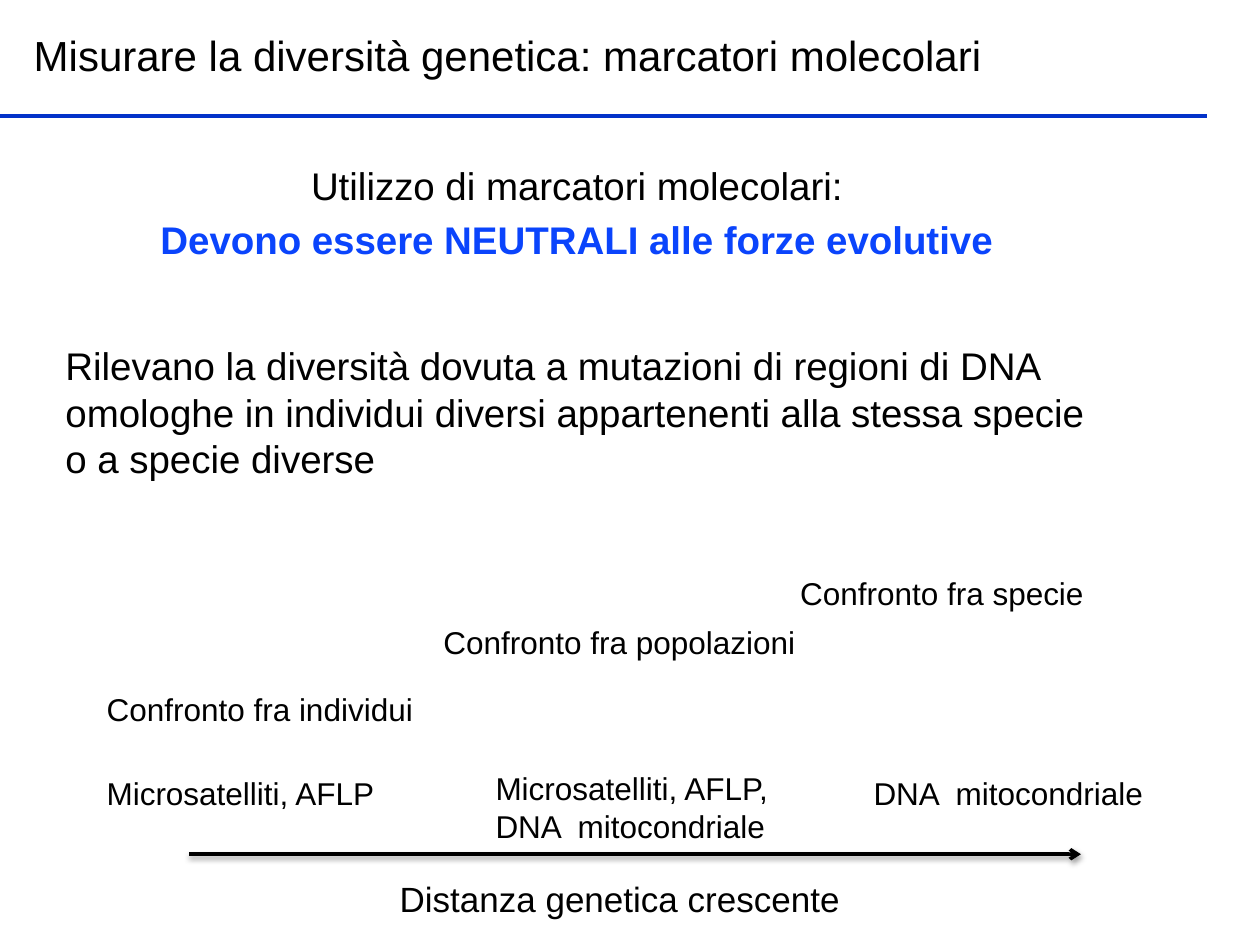
import pptx
import pptx.util
import pptx.dml.color
import pptx.enum.shapes
import pptx.enum.text
from lxml import etree

Cm, Pt = pptx.util.Cm, pptx.util.Pt
ALIGN = pptx.enum.text.PP_ALIGN
ANCHOR = pptx.enum.text.MSO_ANCHOR

COLORS = {"text": "000000", "rule": "0332C9", "emphasis": "0A44FC", "arrow": "000000"}
FONT = "Arial"

# Content; positions and sizes are in centimetres
TITLE = "Misurare la diversità genetica: marcatori molecolari"
INTRO = ["Utilizzo di marcatori molecolari:", "Devono essere NEUTRALI alle forze evolutive"]
EXPLANATION = [
    "Rilevano la diversità dovuta a mutazioni di regioni di DNA omologhe "
    "in individui diversi appartenenti alla stessa specie o a specie diverse"
]
AXIS_LABEL = "Distanza genetica crescente"
COMPARISONS = [  # left, top, width, lines
    (1.9, 13.78, 7.2, ["Confronto fra individui"]),
    (8.69, 12.44, 7.62, ["Confronto fra popolazioni"]),
    (15.88, 11.44, 7.62, ["Confronto fra specie"]),
]
MARKERS = [
    (1.9, 15.48, 6.14, ["Microsatelliti, AFLP"]),
    (9.74, 15.38, 6.14, ["Microsatelliti, AFLP,", "DNA  mitocondriale"]),
    (17.36, 15.48, 6.14, ["DNA  mitocondriale"]),
]
LABEL_LINE, LABEL_MARGINS = 0.77, 0.25

presentation = pptx.Presentation()
presentation.slide_width, presentation.slide_height = Cm(25.4), Cm(19.05)
slide = presentation.slides.add_slide(presentation.slide_layouts[6])


def rgb(name):
    return pptx.dml.color.RGBColor.from_string(COLORS[name])


def add_text(left, top, width, height, lines, size,
             align=ALIGN.LEFT, anchor=ANCHOR.TOP, space_before=0):
    shape = slide.shapes.add_textbox(Cm(left), Cm(top), Cm(width), Cm(height))
    frame = shape.text_frame
    frame.word_wrap = True
    frame.vertical_anchor = anchor
    frame.text = "\n".join(lines)
    for paragraph in frame.paragraphs:
        paragraph.alignment = align
        paragraph.space_before = Pt(space_before)
        paragraph.font.name = FONT
        paragraph.font.size = Pt(size)
        paragraph.font.color.rgb = rgb("text")
    return frame


def add_line(left, right, y, color):
    connector = slide.shapes.add_connector(
        pptx.enum.shapes.MSO_CONNECTOR.STRAIGHT, Cm(left), Cm(y), Cm(right), Cm(y))
    connector.line.color.rgb = rgb(color)
    connector.line.width = Pt(2)
    properties = connector._element.spPr
    effects = etree.SubElement(properties, pptx.oxml.ns.qn("a:effectLst"))
    return connector, effects


# Title and rule
add_line(0, 24.33, 2.34, "rule")
add_text(0.43, 0.46, 21.59, 1.27, [TITLE], 24, anchor=ANCHOR.MIDDLE)

# Main statements
intro = add_text(0.2, 3.15, 22.86, 2.34, INTRO, 22, align=ALIGN.CENTER, space_before=4.4)
emphasis = intro.paragraphs[1].font
emphasis.bold = True
emphasis.color.rgb = rgb("emphasis")
add_text(1.07, 6.78, 21.59, 3.07, EXPLANATION, 22, space_before=4.4)

# Genetic distance arrow with its soft shadow
arrow, effects = add_line(3.81, 21.79, 17.22, "arrow")
etree.SubElement(arrow.line._get_or_add_ln(), pptx.oxml.ns.qn("a:tailEnd"), type="arrow")
shadow = etree.SubElement(
    effects, pptx.oxml.ns.qn("a:outerShdw"),
    blurRad=str(Pt(3.1)), dist=str(Pt(1.6)), dir="5400000", rotWithShape="0")
shadow_color = etree.SubElement(shadow, pptx.oxml.ns.qn("a:srgbClr"), val=COLORS["arrow"])
etree.SubElement(shadow_color, pptx.oxml.ns.qn("a:alpha"), val="38000")
add_text(6.78, 17.55, 11.43, 1.12, [AXIS_LABEL], 20, align=ALIGN.CENTER, anchor=ANCHOR.MIDDLE)

# Comparisons and the markers suited to each
for left, top, width, lines in COMPARISONS + MARKERS:
    add_text(left, top, width, LABEL_LINE * len(lines) + LABEL_MARGINS, lines, 18)

presentation.save("out.pptx")
